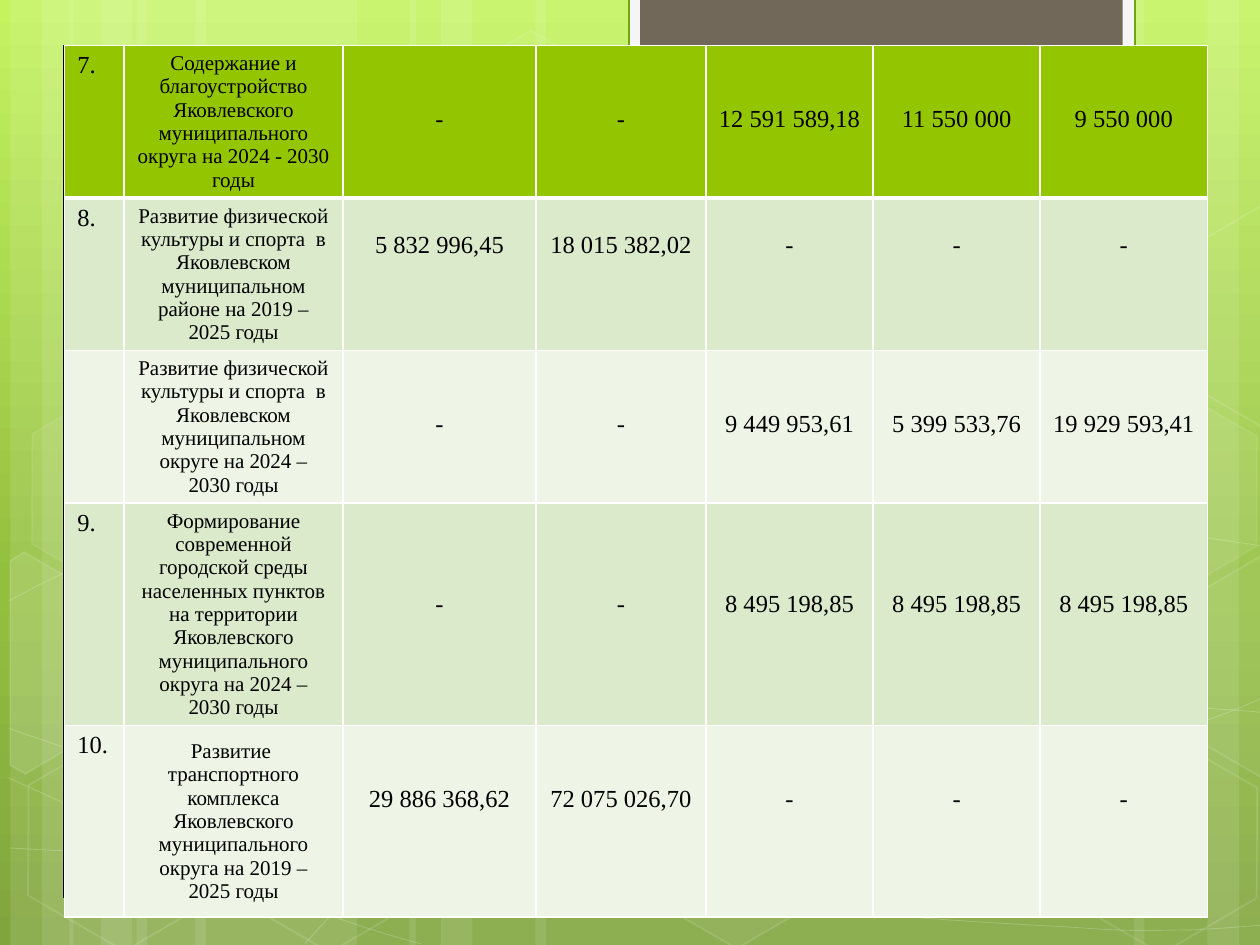
from copy import deepcopy
from math import cos, radians, sin
from typing import NamedTuple, Optional

from lxml import etree
from pptx import Presentation
from pptx.dml.color import RGBColor
from pptx.enum.shapes import MSO_SHAPE
from pptx.enum.text import MSO_ANCHOR, PP_ALIGN
from pptx.oxml.ns import qn
from pptx.util import Emu, Pt

RECTANGLE, HEXAGON = MSO_SHAPE.RECTANGLE, MSO_SHAPE.HEXAGON
LEFT, CENTER = PP_ALIGN.LEFT, PP_ALIGN.CENTER
TOP, MIDDLE = MSO_ANCHOR.TOP, MSO_ANCHOR.MIDDLE

# Square grid: 10 columns by 7.5 rows
COLUMNS, ROWS = 10, 7.5
SLIDE_WIDTH, SLIDE_HEIGHT = Emu(9144000), Emu(6858000)
UNIT = SLIDE_WIDTH / COLUMNS
TILT = 30


class Theme:
    font = "Times New Roman"
    number_size, name_size, number_line = 14, 12, 15.5
    white, black = "FFFFFF", "000000"
    background = ((0, "C3F35F"), (0.62, "93BF3F"), (1, "81A53E"))
    tab_rim, tab_line, tab = "F5F5F5", "74A510", "71685A"
    header, dark_band, light_band = "94C600", "DCEACC", "EEF5E7"


class Paint(NamedTuple):
    fill: Optional[str] = None
    fill_alpha: int = 100
    line: Optional[str] = None
    line_width: float = 1
    line_alpha: int = 100


class Hexagon(NamedTuple):
    left: float
    top: float
    fill_alpha: int
    line_alpha: int


class CutHexagon(NamedTuple):
    center: tuple
    points: list
    fill_alpha: int


class Programme(NamedTuple):
    number: str
    name: str
    amounts: tuple
    height: float
    lines_above: int
    color: str


def grid(value: float) -> Emu:
    return Emu(round(value * UNIT))


def paint(shape, style: Paint) -> None:
    shape.shadow.inherit = False
    parts = ((shape.fill, style.fill, style.fill_alpha, "a:solidFill/a:srgbClr"),
             (shape.line.fill, style.line, style.line_alpha, "a:ln/a:solidFill/a:srgbClr"))
    for target, color, alpha, place in parts:
        if color is None:
            target.background()
            continue
        target.solid()
        target.fore_color.rgb = RGBColor.from_string(color)
        if alpha < 100:
            node = shape._element.spPr.xpath(place)[0]
            etree.SubElement(node, qn("a:alpha"), val=str(alpha * 1000))
    if style.line:
        shape.line.width = Pt(style.line_width)


def glass(fill_alpha: int, line_alpha: int) -> Paint:
    return Paint(Theme.white if fill_alpha else None, fill_alpha, Theme.white, 1, line_alpha)


def add_preset(page, kind, left, top, width, height, style: Paint):
    shape = page.shapes.add_shape(kind, *map(grid, (left, top, width, height)))
    paint(shape, style)
    return shape


def add_outline(page, points: list, style: Paint, close: bool):
    first, *rest = [(grid(x), grid(y)) for x, y in points]
    builder = page.shapes.build_freeform(*first)
    builder.add_line_segments(rest, close=close)
    shape = builder.convert_to_shape()
    paint(shape, style)
    return shape


def add_curve(page, knots: list, style: Paint) -> None:
    """Draw a chain of cubic curves: a start, then three knots per curve."""
    shape = add_outline(page, knots, style, False)
    lines = shape._element.spPr.xpath(".//a:lnTo")
    for start in range(0, len(lines), 3):
        bend = etree.Element(qn("a:cubicBezTo"))
        lines[start].addprevious(bend)
        for line in lines[start:start + 3]:
            bend.append(line[0])
            line.getparent().remove(line)


def add_cut_hexagon(page, item: CutHexagon) -> None:
    """Lay the outline level around its centre, then tilt the shape."""
    (x0, y0), c, s = item.center, cos(radians(TILT)), sin(radians(TILT))
    level = [(x0 + (x - x0) * c + (y - y0) * s, y0 - (x - x0) * s + (y - y0) * c)
             for x, y in item.points]
    add_outline(page, level, glass(item.fill_alpha, 12), True).rotation = TILT


def fill_background(page) -> None:
    fill = page.background.fill
    fill.gradient()
    fill.gradient_angle = 270
    stop_list = page._element.find(".//" + qn("a:gsLst"))
    stop_list.insert(1, deepcopy(stop_list[0]))
    for stop, (position, color) in zip(fill.gradient_stops, Theme.background):
        stop.position = position
        stop.color.rgb = RGBColor.from_string(color)


def write_cell(cell, text: str, size: int, align, anchor, lines_above: int = 0) -> None:
    cell.vertical_anchor = anchor
    cell.margin_top = grid(0.05) + Pt(lines_above * Theme.number_line)
    cell.text = text
    para = cell.text_frame.paragraphs[0]
    para.alignment = align
    para.font.name, para.font.size, para.font.bold = Theme.font, Pt(size), False
    para.font.color.rgb = RGBColor.from_string(Theme.black)


def style_cell(cell, color: str, top: float, bottom: float) -> None:
    properties = cell._tc.get_or_add_tcPr()
    for side, width in (("L", 1), ("R", 1), ("T", top), ("B", bottom)):
        border = etree.SubElement(properties, qn("a:ln" + side), w=str(Pt(width)))
        solid = etree.SubElement(border, qn("a:solidFill"))
        etree.SubElement(solid, qn("a:srgbClr"), val=Theme.white)
    cell.fill.solid()
    cell.fill.fore_color.rgb = RGBColor.from_string(color)


def add_programmes(page, left: Emu, top: Emu, widths: list, programmes: list) -> None:
    height = sum(item.height for item in programmes)
    frame = page.shapes.add_table(len(programmes), len(widths), left, top,
                                  grid(sum(widths)), grid(height))
    table = frame.table
    table.first_row = table.horz_banding = False
    for column, width in zip(table.columns, widths):
        column.width = grid(width)
    for index, (row, item) in enumerate(zip(table.rows, programmes)):
        row.height = grid(item.height)
        number, name, *amounts = row.cells
        write_cell(number, item.number, Theme.number_size, LEFT, TOP)
        write_cell(name, item.name, Theme.name_size, CENTER, MIDDLE)
        for cell, amount in zip(amounts, item.amounts):
            write_cell(cell, amount, Theme.number_size, CENTER, TOP, item.lines_above)
        for cell in row.cells:
            style_cell(cell, item.color, 3 if index == 1 else 1, 3 if index == 0 else 1)


# Stripe clusters, in twelfths of a column: (offset, width)
STRIPES = ((12, 21), (0, 6), (3, 10))
CURVES = [
    [(0.07, 6.73), (0.61, 6.76), (1.15, 6.79), (1.9, 6.78), (2.65, 6.77), (3.58, 6.75),
     (4.58, 6.65), (5.58, 6.55), (7, 6.36), (7.92, 6.17), (8.83, 5.98), (9.77, 5.68), (10.07, 5.51)],
    [(0.07, 4.77), (0.36, 4.61), (0.65, 4.46), (1.21, 4.31), (1.78, 4.16), (2.59, 3.94),
     (3.47, 3.87), (4.36, 3.8), (5.44, 3.79), (6.54, 3.87), (7.64, 3.95), (9.47, 4.26), (10.07, 4.34)],
    [(0.06, 6.17), (1.27, 6.72), (2.47, 7.27), (3.34, 7.49)],
    [(0.07, 5.78), (0.38, 5.89), (0.7, 6), (1.28, 6.16), (1.86, 6.31), (2.73, 6.56), (3.57, 6.73),
     (4.4, 6.9), (5.45, 7.08), (6.28, 7.18), (7.11, 7.29), (8, 7.33), (8.53, 7.36),
     (9.05, 7.4), (9.19, 7.38), (9.45, 7.38), (9.71, 7.37), (9.89, 7.35), (10.07, 7.34)],
    [(2.42, 7.49), (2.6, 7.29), (2.78, 7.09), (3.02, 6.91), (3.26, 6.73), (3.6, 6.53), (3.88, 6.39),
     (4.16, 6.25), (4.33, 6.19), (4.7, 6.09), (5.06, 5.99), (5.73, 5.85), (6.08, 5.78),
     (6.44, 5.71), (6.49, 5.71), (6.8, 5.69), (7.11, 5.66), (7.6, 5.63), (7.94, 5.62),
     (8.29, 5.61), (8.86, 5.62), (8.86, 5.62), (8.86, 5.62), (9.53, 5.62), (9.53, 5.62),
     (9.71, 5.63), (9.88, 5.64), (9.97, 5.65), (10.06, 5.66), (10.03, 5.65), (10.06, 5.66)],
]
HEXAGONS = [
    Hexagon(3.34, 0.36, 4, 8), Hexagon(4.97, 5.89, 6, 12), Hexagon(0.11, 5.91, 0, 12),
    Hexagon(0.14, 3.12, 7, 8), Hexagon(1.74, 5.92, 0, 12), Hexagon(7.53, 4.53, 10, 12),
    Hexagon(8.34, 5.93, 0, 12), Hexagon(8.34, 3.14, 7, 8),
]
CUT_HEXAGONS = [
    CutHexagon((0.36, 5.35), [(0.08, 4.45), (0.19, 4.38), (0.96, 4.82), (0.95, 5.7), (0.2, 6.14), (0.08, 6.07)], 10),
    CutHexagon((9.85, 5.2), [(9.26, 4.85), (10.01, 4.41), (10.09, 4.46), (10.09, 6.13), (10.02, 6.17), (9.26, 5.73)], 4),
    CutHexagon((9.85, 2.41), [(9.26, 2.07), (10.01, 1.63), (10.1, 1.68), (10.09, 3.35), (10.02, 3.39), (9.26, 2.95)], 0),
]
WIDTHS = [0.47, 1.74, 1.53, 1.35] + [3.98 / 3] * 3
PROGRAMMES = [
    Programme("7.", "Содержание и благоустройство Яковлевского муниципального округа на 2024 - 2030 годы",
              ("-", "-", "12 591 589,18", "11 550 000", "9 550 000"), 1.18, 2, Theme.header),
    Programme("8.", "Развитие физической культуры и спорта  в Яковлевском муниципальном районе на 2019 – 2025 годы",
              ("5 832 996,45", "18 015 382,02", "-", "-", "-"), 1.18, 1, Theme.dark_band),
    Programme("", "Развитие физической культуры и спорта  в Яковлевском муниципальном округе на 2024 – 2030 годы",
              ("-", "-", "9 449 953,61", "5 399 533,76", "19 929 593,41"), 1.18, 2, Theme.light_band),
    Programme("9.", "Формирование современной городской среды населенных пунктов на территории "
              "Яковлевского муниципального округа на 2024 – 2030 годы",
              ("-", "-") + ("8 495 198,85",) * 3, 1.3, 3, Theme.dark_band),
    Programme("10.", "Развитие  транспортного комплекса Яковлевского муниципального округа на 2019 – 2025 годы",
              ("29 886 368,62", "72 075 026,70", "-", "-", "-"), 1.52, 2, Theme.light_band),
]


def main() -> None:
    deck = Presentation()
    deck.slide_width, deck.slide_height = SLIDE_WIDTH, SLIDE_HEIGHT
    page = deck.slides.add_slide(deck.slide_layouts[6])
    fill_background(page)

    # Pale stripes: clusters from the left, one mirrored at the right edge
    stripes = [(start + offset, width) for start in (1, 6.6) for offset, width in STRIPES]
    stripes += [(121 - offset - width, width) for offset, width in STRIPES]
    stripes += [(51, 37), (39, 6), (42, 10)]
    for left, width in stripes:
        add_preset(page, RECTANGLE, left / 12, 0, width / 12, ROWS, Paint(Theme.white, 10))

    # Thin curves and hexagons
    for knots in CURVES:
        add_curve(page, knots, Paint(None, 100, Theme.white, 0.5, 20))
    for item in HEXAGONS:
        hexagon = add_preset(page, HEXAGON, item.left, item.top, 1.75, 1.52,
                             glass(item.fill_alpha, item.line_alpha))
        hexagon.rotation = TILT
        hexagon.adjustments[0] = 0.285
    for item in CUT_HEXAGONS:
        add_cut_hexagon(page, item)

    # White sheet with its top tab
    add_preset(page, RECTANGLE, 0.5, 0.36, 9, 6.76, Paint(Theme.white, 100, Theme.black, 0.5))
    add_preset(page, RECTANGLE, 4.99, -0.02, 4.02, 0.76, Paint(Theme.tab_rim, 100, Theme.tab_line, 1.25))
    add_preset(page, RECTANGLE, 5.08, -0.02, 3.83, 0.68, Paint(Theme.tab))

    # Programme amounts
    add_programmes(page, Pt(37), Pt(26), WIDTHS, PROGRAMMES)
    deck.save("out.pptx")


if __name__ == "__main__":
    main()
